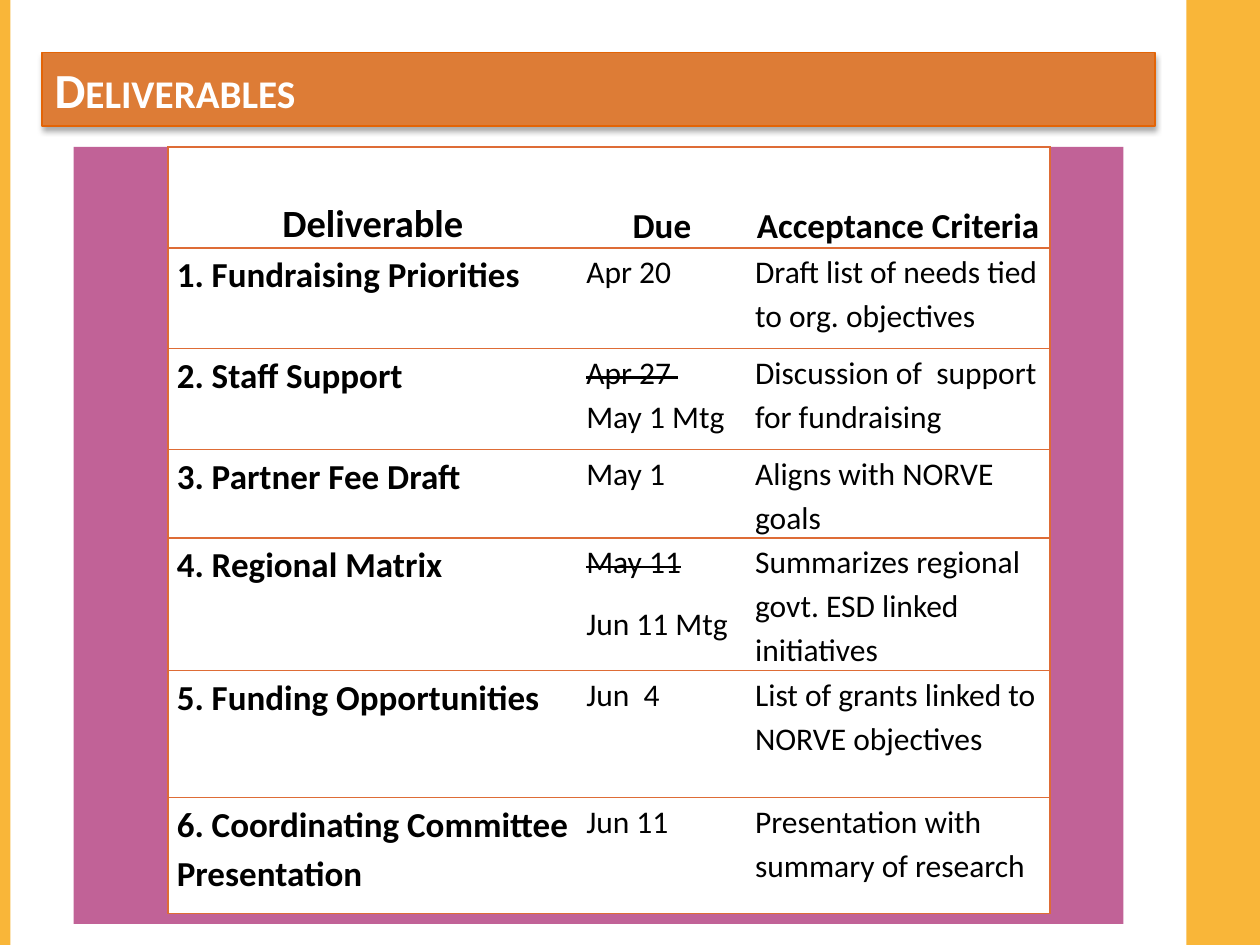
from dataclasses import dataclass

from lxml.etree import SubElement
from pptx import Presentation
from pptx.dml.color import RGBColor as Rgb
from pptx.enum.shapes import MSO_SHAPE as Kind
from pptx.enum.text import MSO_ANCHOR as Anchor, PP_ALIGN as Align
from pptx.oxml.ns import qn
from pptx.util import Inches, Pt

HUES = {"gold": "F9B639", "plum": "B23B7E", "band": "DD7C36", "edge": "E36406",
        "rule": "DE6C36", "white": "FFFFFF", "black": "000000"}
FACE = "Calibri"
CELL = Inches(1 / 12)  # the slide is a grid of 120 columns by 90 rows
COLS = (3.25, 1.34, 2.41)
HEAD = 0.8


@dataclass(frozen=True)
class Box:
    col: int
    row: int
    wide: int
    high: int

    def place(self) -> tuple:
        return tuple(CELL * n for n in (self.col, self.row, self.wide, self.high))


@dataclass(frozen=True)
class Bit:
    text: str
    struck: bool = False


@dataclass(frozen=True)
class Item:
    name: str
    due: tuple  # paragraphs, each a tuple of bits
    goal: str
    high: float
    after: int = 0  # space after the goal


@dataclass(frozen=True)
class Style:
    size: int
    bold: bool = False
    align: Align = Align.LEFT
    anchor: Anchor = Anchor.TOP
    after: int = 10


BARS = (Box(113, 0, 7, 90), Box(0, 0, 1, 90))
PANEL = Box(7, 14, 100, 74)
TITLE = Box(4, 5, 106, 7)
GRID = Box(16, 14, 84, 72)

HEADS = (("Deliverable", 22), ("Due", 20), ("Acceptance Criteria", 20))
ITEMS = (
    Item("1. Fundraising Priorities", ((Bit("Apr 20"),),),
         "Draft list of needs tied to org. objectives", 0.8, 10),
    Item("2. Staff Support", ((Bit("Apr 27  ", True), Bit("May 1 Mtg")),),
         "Discussion of  support for fundraising", 0.8),
    Item("3. Partner Fee Draft", ((Bit("May 1"),),), "Aligns with NORVE goals", 0.67),
    Item("4. Regional Matrix", ((Bit("May 11", True),), (Bit("Jun 11 Mtg"),)),
         "Summarizes regional govt. ESD linked initiatives", 1.01),
    Item("5. Funding Opportunities", ((Bit("Jun  4"),),),
         "List of grants linked to NORVE objectives", 1.01),
    Item("6. Coordinating Committee Presentation", ((Bit("Jun 11"),),),
         "Presentation with summary of research", 0.92, 10),
)


def hue(name: str) -> Rgb:
    return Rgb.from_string(HUES[name])


def apply(thing, values: dict) -> None:
    for key, value in values.items():
        setattr(thing, key, value)


def paint(thing, name: str) -> None:
    thing.fill.solid()
    thing.fill.fore_color.rgb = hue(name)


def ink(run, size: int, bold: bool, name: str) -> None:
    apply(run.font, {"name": FACE, "size": Pt(size), "bold": bold})
    run.font.color.rgb = hue(name)


def block(slide, box: Box, name: str):
    shape = slide.shapes.add_shape(Kind.RECTANGLE, *box.place())
    shape.shadow.inherit = False
    shape.line.fill.background()
    paint(shape, name)
    return shape


def fade(shape, share: int) -> None:
    color = shape.fill._xPr.find(qn("a:solidFill"))[0]
    SubElement(color, qn("a:alpha"), val=str(share * 1000))


def shade(shape) -> None:
    """Soft shadow straight below the shape."""
    effects = SubElement(shape._element.spPr, qn("a:effectLst"))
    drop = SubElement(effects, qn("a:outerShdw"), blurRad=str(Pt(3.5)),
                      dist=str(Pt(2.2)), dir="5400000", rotWithShape="0")
    color = SubElement(drop, qn("a:srgbClr"), val=HUES["black"])
    SubElement(color, qn("a:alpha"), val="32000")


def head(slide) -> None:
    title = slide.shapes.title
    apply(title, dict(zip(("left", "top", "width", "height"), TITLE.place())))
    paint(title, "band")
    title.line.color.rgb = hue("edge")
    title.line.width = Pt(0.75)
    shade(title)
    apply(title.text_frame, {"text": "Deliverables", "vertical_anchor": Anchor.MIDDLE})
    para = title.text_frame.paragraphs[0]
    para.alignment = Align.LEFT
    run = para.runs[0]
    ink(run, 28, True, "white")
    run._r.get_or_add_rPr().set("cap", "small")


def frame(cell, col: int) -> None:
    """Rule above and below, and on the outer sides of the table."""
    props = cell._tc.get_or_add_tcPr()
    drawn = {"L": col == 0, "R": col == len(COLS) - 1, "T": True, "B": True}
    for spot, (side, shown) in enumerate(drawn.items()):
        line = SubElement(props, qn(f"a:ln{side}"), w=str(Pt(1)))
        props.insert(spot, line)
        if shown:
            fill = SubElement(line, qn("a:solidFill"))
            SubElement(fill, qn("a:srgbClr"), val=HUES["rule"])
        else:
            SubElement(line, qn("a:noFill"))


def write(cell, paras: tuple, style: Style) -> None:
    apply(cell, {"margin_left": Inches(0.07), "margin_right": Inches(0.07),
                 "margin_top": 0, "margin_bottom": 0,
                 "vertical_anchor": style.anchor})
    paint(cell, "white")
    text = cell.text_frame
    for spot, bits in enumerate(paras):
        para = text.add_paragraph() if spot else text.paragraphs[0]
        apply(para, {"alignment": style.align, "line_spacing": 1.15,
                     "space_after": Pt(style.after)})
        for bit in bits:
            run = para.add_run()
            run.text = bit.text
            ink(run, style.size, style.bold, "black")
            if bit.struck:
                run._r.get_or_add_rPr().set("strike", "sngStrike")


def plain(text: str) -> tuple:
    return ((Bit(text),),)


def fill(slide) -> None:
    table = slide.shapes.add_table(len(ITEMS) + 1, len(COLS), *GRID.place()).table
    apply(table, {"first_row": False, "horz_banding": False})
    for col, wide in zip(table.columns, COLS):
        col.width = Inches(wide)
    for row, high in zip(table.rows, (HEAD, *(item.high for item in ITEMS))):
        row.height = Inches(high)

    for col, (text, size) in enumerate(HEADS):
        write(table.cell(0, col), plain(text),
              Style(size, True, Align.CENTER, Anchor.BOTTOM))
    for row, item in enumerate(ITEMS, 1):
        write(table.cell(row, 0), plain(item.name), Style(20, True))
        write(table.cell(row, 1), item.due, Style(18))
        write(table.cell(row, 2), plain(item.goal), Style(18, after=item.after))
    for row in table.rows:
        for col, cell in enumerate(row.cells):
            frame(cell, col)


def main() -> None:
    deck = Presentation()
    apply(deck, {"slide_width": CELL * 120, "slide_height": CELL * 90})
    slide = deck.slides.add_slide(deck.slide_layouts[5])
    # Side bars and backdrop
    for bar in BARS:
        block(slide, bar, "gold")
    fade(block(slide, PANEL, "plum"), 80)
    # Title band and table
    head(slide)
    fill(slide)
    deck.save("out.pptx")


if __name__ == "__main__":
    main()
